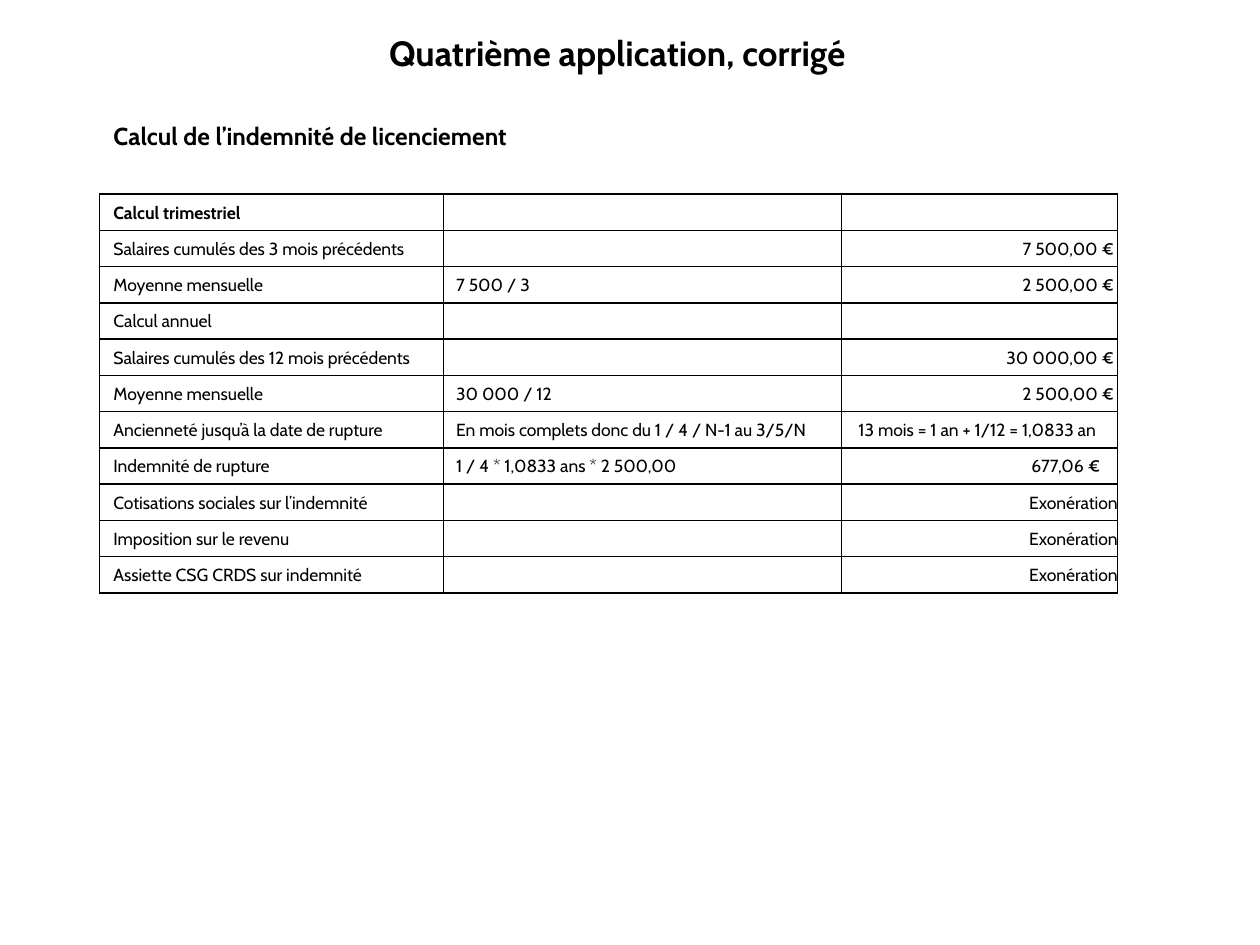
import pptx
import pptx.util
import pptx.dml.color
import pptx.enum.text
import pptx.oxml
import pptx.oxml.ns
from pptx.util import Inches

COLORS = {"text": "000000", "border": "000000", "background": "FFFFFF"}
ALIGN = pptx.enum.text.PP_ALIGN
ANCHOR = pptx.enum.text.MSO_ANCHOR

# Each row: label, calculation, result
ROWS = [
    ("Calcul trimestriel", "", ""),
    ("Salaires cumulés des 3 mois précédents", "", "7 500,00 €"),
    ("Moyenne mensuelle", "7 500 / 3", "2 500,00 €"),
    ("Calcul annuel", "", ""),
    ("Salaires cumulés des 12 mois précédents", "", "30 000,00 €"),
    ("Moyenne mensuelle", "30 000 / 12", "2 500,00 €"),
    ("Ancienneté jusqu’à la date de rupture",
     "En mois complets donc du 1 / 4 / N-1 au 3/5/N", "13 mois = 1 an + 1/12 = 1,0833 an"),
    ("Indemnité de rupture", "1 / 4 * 1,0833 ans * 2 500,00", "677,06 €"),
    ("Cotisations sociales sur l’indemnité", "", "Exonération"),
    ("Imposition sur le revenu", "", "Exonération"),
    ("Assiette CSG CRDS sur indemnité", "", "Exonération"),
]
SENIORITY_ROW, INDEMNITY_ROW = 6, 7


class SlideBuilder:
    font_name = "Cabin"
    border_width = 0.95

    def __init__(self, slide):
        self.slide = slide

    def background(self):
        fill = self.slide.background.fill
        fill.solid()
        fill.fore_color.rgb = pptx.dml.color.RGBColor.from_string(COLORS["background"])

    def format_paragraph(self, paragraph, size, line, bold=False, align=ALIGN.LEFT,
                         before=0, after=0):
        paragraph.alignment = align
        paragraph.line_spacing = pptx.util.Pt(line)
        paragraph.space_before = pptx.util.Pt(before)
        paragraph.space_after = pptx.util.Pt(after)
        font = paragraph.font
        font.name = self.font_name
        font.size = pptx.util.Pt(size)
        font.bold = bold
        font.color.rgb = pptx.dml.color.RGBColor.from_string(COLORS["text"])

    def placeholder(self, shape, text, left, top, width, height, size, line, align):
        shape.left, shape.top = Inches(left), Inches(top)
        shape.width, shape.height = Inches(width), Inches(height)
        frame = shape.text_frame
        frame.margin_left = frame.margin_right = frame.margin_top = frame.margin_bottom = 0
        frame.word_wrap = True
        frame.auto_size = pptx.enum.text.MSO_AUTO_SIZE.NONE
        frame.vertical_anchor = ANCHOR.TOP
        frame.text = text
        paragraph = frame.paragraphs[0]
        self.format_paragraph(paragraph, size, line, True, align)
        # No bullet and no hanging indent
        properties = paragraph._p.get_or_add_pPr()
        properties.set("marL", "0")
        properties.set("indent", "0")
        bullet = pptx.oxml.parse_xml(f'<a:buNone {pptx.oxml.ns.nsdecls("a")}/>')
        properties.insert_element_before(bullet, "a:tabLst", "a:defRPr", "a:extLst")

    def table(self, rows, left, top, column_widths, row_height):
        frame = self.slide.shapes.add_table(
            len(rows), len(column_widths), Inches(left), Inches(top),
            Inches(sum(column_widths)), Inches(row_height * len(rows)))
        table = frame.table
        table.first_row = table.horz_banding = False
        for column, width in zip(table.columns, column_widths):
            column.width = Inches(width)
        for row in table.rows:
            row.height = Inches(row_height)
        return table

    def cell(self, cell, text, bold, align, left, right):
        cell.margin_left, cell.margin_right = Inches(left), Inches(right)
        cell.margin_top = cell.margin_bottom = 0
        cell.vertical_anchor = ANCHOR.MIDDLE
        cell.text = text
        self.format_paragraph(cell.text_frame.paragraphs[0], 10, 13, bold, align, 4.3, 4.5)
        self.cell_borders(cell)
        cell.fill.background()

    def cell_borders(self, cell):
        properties = cell._tc.get_or_add_tcPr()
        for side in ("lnL", "lnR", "lnT", "lnB"):
            properties.append(pptx.oxml.parse_xml(
                f'<a:{side} {pptx.oxml.ns.nsdecls("a")} w="{pptx.util.Pt(self.border_width)}">'
                f'<a:solidFill><a:srgbClr val="{COLORS["border"]}"/></a:solidFill></a:{side}>'))


def result_layout(index, text):
    """Return alignment and right margin of a result cell."""
    if index == SENIORITY_ROW:
        return ALIGN.CENTER, 0.04
    if index == INDEMNITY_ROW:
        return ALIGN.RIGHT, 0.14
    return ALIGN.RIGHT, 0.03 if text.endswith("€") else 0


def main():
    presentation = pptx.Presentation()
    presentation.slide_width, presentation.slide_height = Inches(10), Inches(7.5)
    slide = presentation.slides.add_slide(presentation.slide_layouts[1])
    builder = SlideBuilder(slide)
    builder.background()

    # Title and subtitle
    builder.placeholder(slide.shapes.title, "Quatrième application, corrigé",
                        0.3, 0.32, 9.2, 0.3, 20, 19, ALIGN.CENTER)
    builder.placeholder(slide.placeholders[1], "Calcul de l’indemnité de licenciement",
                        0.9, 0.97, 8.65, 0.57, 14, 16, ALIGN.LEFT)

    # Calculation table
    table = builder.table(ROWS, 0.79, 1.54, (2.73, 3.16, 2.19), 3.17 / len(ROWS))
    for index, (label, calculation, result) in enumerate(ROWS):
        builder.cell(table.cell(index, 0), label, index == 0, ALIGN.LEFT, 0.11, 0)
        builder.cell(table.cell(index, 1), calculation, False, ALIGN.LEFT, 0.1, 0)
        align, right = result_layout(index, result)
        builder.cell(table.cell(index, 2), result, False, align, 0, right)

    presentation.save("out.pptx")


if __name__ == "__main__":
    main()
